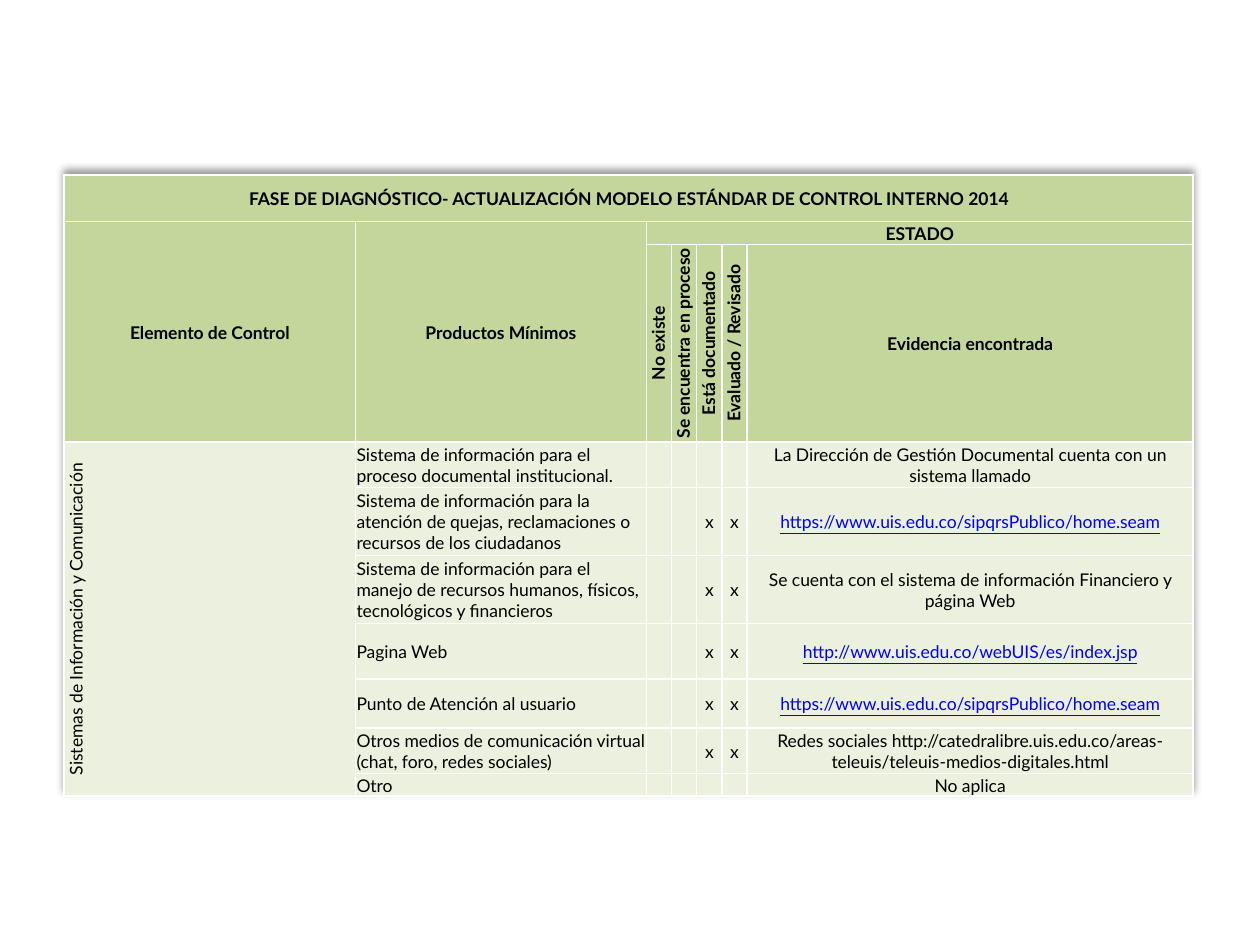
from dataclasses import dataclass

from lxml import etree
from pptx import Presentation
from pptx.dml.color import RGBColor
from pptx.enum.text import MSO_ANCHOR, PP_ALIGN
from pptx.oxml import parse_xml
from pptx.oxml.ns import qn
from pptx.util import Inches, Pt

CENTER, LEFT, MIDDLE = PP_ALIGN.CENTER, PP_ALIGN.LEFT, MSO_ANCHOR.MIDDLE
A_NS = "http://schemas.openxmlformats.org/drawingml/2006/main"
FONT, SIZE = "Lato", 10
COLORS = {"header": "C3D69B", "body": "EBF1DE", "text": "000000",
          "link": "0000FF", "border": "FFFFFF"}
COL_WIDTHS = [2.31, 2.31, 0.2, 0.2, 0.2, 0.2, 3.54]
ROW_HEIGHTS = [0.37, 0.18, 1.57, 0.36, 0.54, 0.54, 0.44, 0.39, 0.36, 0.18]
HEADER_ROWS = 3


@dataclass
class Product:
    name: str
    evidence: str
    done: bool = True
    link: bool = False


@dataclass
class Label:
    row: int
    col: int
    text: str
    row_span: int = 1
    col_span: int = 1
    vertical: bool = False
    bold: bool = True


LABELS = [
    Label(0, 0, "FASE DE DIAGNÓSTICO- ACTUALIZACIÓN MODELO ESTÁNDAR DE CONTROL INTERNO 2014",
          col_span=7),
    Label(1, 0, "Elemento de Control", row_span=2),
    Label(1, 1, "Productos Mínimos", row_span=2),
    Label(1, 2, "ESTADO", col_span=5),
    Label(2, 2, "No existe", vertical=True),
    Label(2, 3, "Se encuentra en proceso", vertical=True),
    Label(2, 4, "Está documentado", vertical=True),
    Label(2, 5, "Evaluado / Revisado", vertical=True),
    Label(2, 6, "Evidencia encontrada"),
    Label(3, 0, "Sistemas de Información y Comunicación", row_span=7, vertical=True, bold=False),
]

PRODUCTS = [
    Product("Sistema de información para el proceso documental institucional.",
            "La Dirección de Gestión Documental cuenta con un sistema llamado", done=False),
    Product("Sistema de información para la atención de quejas, reclamaciones o recursos de los ciudadanos",
            "https://www.uis.edu.co/sipqrsPublico/home.seam", link=True),
    Product("Sistema de información para el manejo de recursos humanos, físicos, tecnológicos y financieros",
            "Se cuenta con el sistema de información Financiero y página Web"),
    Product("Pagina Web", "http://www.uis.edu.co/webUIS/es/index.jsp", link=True),
    Product("Punto de Atención al usuario",
            "https://www.uis.edu.co/sipqrsPublico/home.seam", link=True),
    Product("Otros medios de comunicación virtual (chat, foro, redes sociales)",
            "Redes sociales http://catedralibre.uis.edu.co/areas-teleuis/teleuis-medios-digitales.html"),
    Product("Otro", "No aplica", done=False),
]


def style_cell(cell, color: str) -> None:
    cell.fill.solid()
    cell.fill.fore_color.rgb = RGBColor.from_string(COLORS[color])
    cell.vertical_anchor = MIDDLE
    cell.margin_left = cell.margin_right = cell.margin_top = Inches(0.01)
    cell.margin_bottom = 0
    tc_pr = cell._tc.get_or_add_tcPr()
    for i, side in enumerate(("lnL", "lnR", "lnT", "lnB")):
        tc_pr.insert(i, parse_xml(
            f'<a:{side} xmlns:a="{A_NS}" w="{Pt(1)}"><a:solidFill>'
            f'<a:srgbClr val="{COLORS["border"]}"/></a:solidFill></a:{side}>'))
    p = cell.text_frame.paragraphs[0]
    etree.SubElement(p._p, qn("a:endParaRPr"), sz=str(SIZE * 100))


def write_cell(cell, text: str, align=CENTER, bold: bool = False, link: bool = False) -> None:
    p = cell.text_frame.paragraphs[0]
    p.alignment = align
    r = p.add_run()
    r.text = text
    r.font.name = FONT
    r.font.size = Pt(SIZE)
    r.font.bold = bold
    r.font.underline = link
    r.font.color.rgb = RGBColor.from_string(COLORS["link" if link else "text"])


def add_label(table, label: Label) -> None:
    cell = table.cell(label.row, label.col)
    if label.row_span > 1 or label.col_span > 1:
        cell.merge(table.cell(label.row + label.row_span - 1, label.col + label.col_span - 1))
    write_cell(cell, label.text, bold=label.bold)
    if label.vertical:
        cell._tc.get_or_add_tcPr().set("vert", "vert270")


def add_product(table, row: int, product: Product) -> None:
    write_cell(table.cell(row, 1), product.name, LEFT)
    if product.done:
        for col in (4, 5):
            write_cell(table.cell(row, col), "x")
    write_cell(table.cell(row, 6), product.evidence, link=product.link)


def add_shadow(table) -> None:
    table._tbl.tblPr.insert(0, parse_xml(
        f'<a:effectLst xmlns:a="{A_NS}"><a:outerShdw blurRad="{Pt(4)}" dist="{Pt(3)}" '
        f'dir="16200000" rotWithShape="0"><a:srgbClr val="{COLORS["text"]}">'
        '<a:alpha val="40000"/></a:srgbClr></a:outerShdw></a:effectLst>'))


def main() -> None:
    prs = Presentation()
    prs.slide_width, prs.slide_height = Inches(10), Inches(7.5)
    s = prs.slides.add_slide(prs.slide_layouts[6])
    table = s.shapes.add_table(
        len(ROW_HEIGHTS), len(COL_WIDTHS), Inches(0.51), Inches(1.39),
        Inches(sum(COL_WIDTHS)), Inches(sum(ROW_HEIGHTS))).table
    for column, width in zip(table.columns, COL_WIDTHS):
        column.width = Inches(width)
    for i, (row, height) in enumerate(zip(table.rows, ROW_HEIGHTS)):
        row.height = Inches(height)
        for cell in row.cells:
            style_cell(cell, "header" if i < HEADER_ROWS else "body")
    add_shadow(table)
    for label in LABELS:
        add_label(table, label)
    for row, product in enumerate(PRODUCTS, HEADER_ROWS):
        add_product(table, row, product)
    prs.save("out.pptx")


if __name__ == "__main__":
    main()
